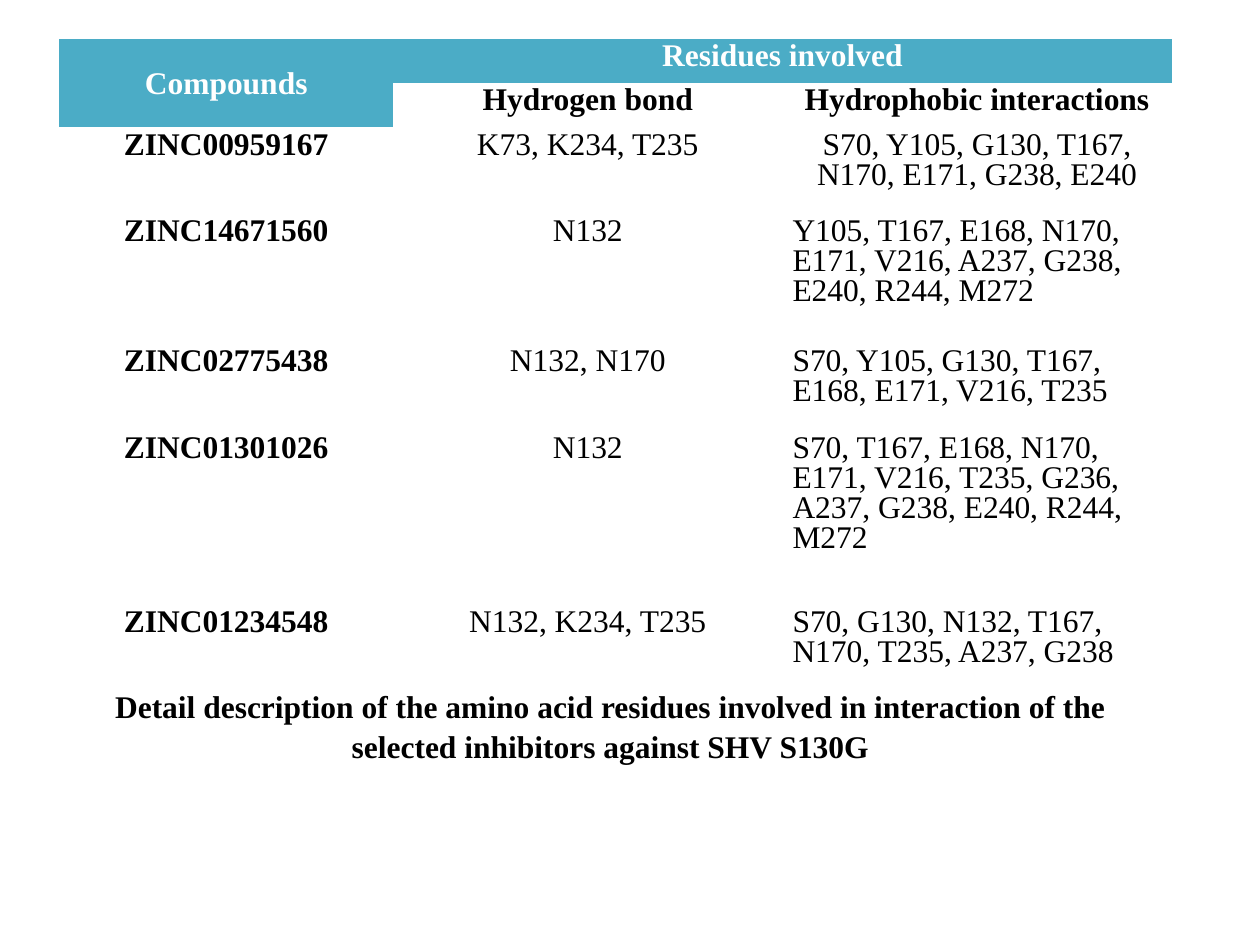
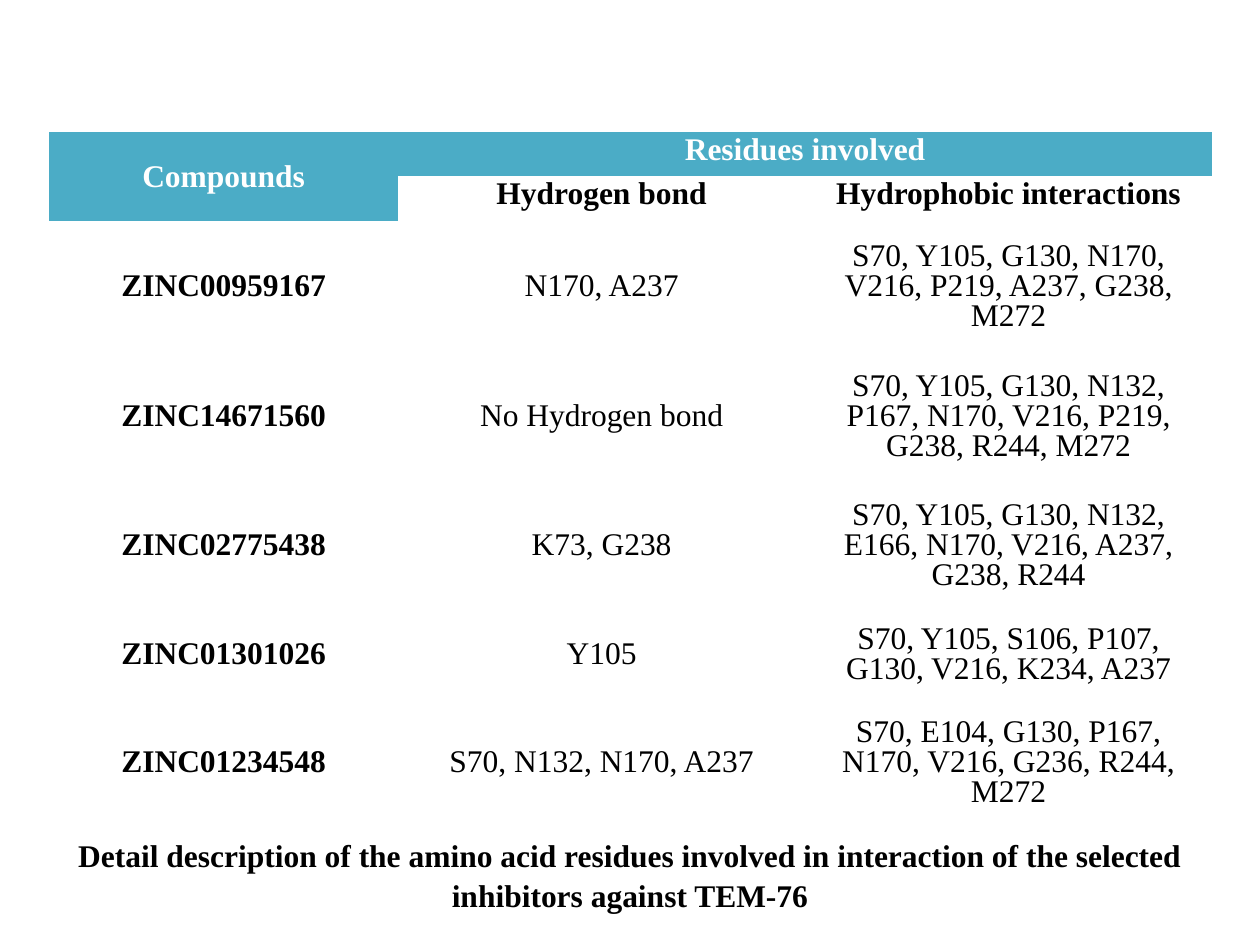
from pptx import Presentation
from pptx.dml.color import RGBColor
from pptx.enum.text import MSO_ANCHOR, MSO_AUTO_SIZE, PP_ALIGN
from pptx.oxml.ns import qn
from pptx.util import Inches, Pt

TEAL = RGBColor(0x4B, 0xAC, 0xC6)
WHITE = RGBColor(0xFF, 0xFF, 0xFF)
BLACK = RGBColor(0x00, 0x00, 0x00)
FONT = "Times New Roman"
SIZE = Pt(18)
PLAIN_TABLE_STYLE = "{2D5ABB26-0587-4C30-8999-92F81FD0307C}"
TITLE_ONLY = 5
HEADER_HEIGHT = 0.35
CAPTION_HEIGHT = 0.9
CAPTION = ("Detail description of the amino acid residues involved "
           "in interaction of the selected inhibitors against ")

# Each row: compound, hydrogen bonds, hydrophobic interactions, height in inches
SHV_ROWS = [
    ("ZINC00959167", "K73, K234, T235",
     "S70, Y105, G130, T167, N170, E171, G238, E240", 0.69),
    ("ZINC14671560", "N132",
     "Y105, T167, E168, N170, E171, V216, A237, G238, E240, R244, M272", 1.03),
    ("ZINC02775438", "N132, N170",
     "S70, Y105, G130, T167, E168, E171, V216, T235", 0.69),
    ("ZINC01301026", "N132",
     "S70, T167, E168, N170, E171, V216, T235, G236, A237, G238, E240, R244, M272", 1.38),
    ("ZINC01234548", "N132, K234, T235",
     "S70, G130, N132, T167, N170, T235, A237, G238", 0.69),
]
TEM_ROWS = [
    ("ZINC00959167", "N170, A237",
     "S70, Y105, G130, N170, V216, P219, A237, G238, M272", 1.03),
    ("ZINC14671560", "No Hydrogen bond",
     "S70, Y105, G130, N132, P167, N170, V216, P219, G238, R244, M272", 1.03),
    ("ZINC02775438", "K73, G238",
     "S70, Y105, G130, N132, E166, N170, V216, A237, G238, R244", 1.03),
    ("ZINC01301026", "Y105",
     "S70, Y105, S106, P107, G130, V216, K234, A237", 0.69),
    ("ZINC01234548", "S70, N132, N170, A237",
     "S70, E104, G130, P167, N170, V216, G236, R244, M272", 1.03),
]


def format_paragraph(paragraph, spacing, align=PP_ALIGN.CENTER, bold=True, color=BLACK):
    paragraph.alignment = align
    paragraph.line_spacing = spacing
    for run in paragraph.runs:
        run.font.name, run.font.size = FONT, SIZE
        run.font.bold = bold
        run.font.color.rgb = color


def fill_cell(cell, text, anchor=MSO_ANCHOR.TOP, header=False, **style):
    cell.text_frame.text = text
    cell.vertical_anchor = anchor
    cell.margin_left = cell.margin_right = Inches(0.08)
    cell.margin_top, cell.margin_bottom = Inches(0.03), 0
    if header:
        cell.fill.solid()
        cell.fill.fore_color.rgb = TEAL
        style["color"] = WHITE
    else:
        cell.fill.background()
    format_paragraph(cell.text_frame.paragraphs[0], 0.86, **style)


def add_residue_table(slide, box, column_widths, rows, anchor, left_aligned):
    """Two header rows, then one row per compound; left_aligned lists compounds
    whose hydrophobic residues are set flush left."""
    frame = slide.shapes.add_table(len(rows) + 2, 3, *map(Inches, box))
    for style_id in frame.element.iter(qn("a:tableStyleId")):
        style_id.text = PLAIN_TABLE_STYLE
    table = frame.table
    table.first_row = table.horz_banding = False
    for column, width in zip(table.columns, column_widths):
        column.width = Inches(width)
    heights = [HEADER_HEIGHT] * 2 + [row[-1] for row in rows]
    for table_row, height in zip(table.rows, heights):
        table_row.height = Inches(height)

    table.cell(0, 0).merge(table.cell(1, 0))
    table.cell(0, 1).merge(table.cell(0, 2))
    fill_cell(table.cell(0, 0), "Compounds", MSO_ANCHOR.MIDDLE, header=True)
    fill_cell(table.cell(0, 1), "Residues involved", header=True)
    fill_cell(table.cell(1, 1), "Hydrogen bond")
    fill_cell(table.cell(1, 2), "Hydrophobic interactions")

    for index, (compound, hydrogen, hydrophobic, _) in enumerate(rows, start=2):
        align = PP_ALIGN.LEFT if compound in left_aligned else PP_ALIGN.CENTER
        fill_cell(table.cell(index, 0), compound, anchor)
        fill_cell(table.cell(index, 1), hydrogen, anchor, bold=False)
        fill_cell(table.cell(index, 2), hydrophobic, anchor, bold=False, align=align)


def add_caption(slide, box, target):
    caption = slide.shapes.title
    caption.left, caption.top, caption.width, caption.height = map(Inches, box)
    text_frame = caption.text_frame
    text_frame.text = CAPTION + target
    text_frame.word_wrap = True
    text_frame.auto_size = MSO_AUTO_SIZE.NONE
    text_frame.vertical_anchor = MSO_ANCHOR.TOP
    format_paragraph(text_frame.paragraphs[0], 1.05)


def add_residue_slide(prs, target, rows, table_at, column_widths, caption_at,
                      caption_width, anchor, left_aligned=()):
    slide = prs.slides.add_slide(prs.slide_layouts[TITLE_ONLY])
    table_height = 2 * HEADER_HEIGHT + sum(row[-1] for row in rows)
    table_box = (*table_at, sum(column_widths), table_height)
    add_residue_table(slide, table_box, column_widths, rows, anchor, left_aligned)
    add_caption(slide, (*caption_at, caption_width, CAPTION_HEIGHT), target)


def main():
    prs = Presentation()
    prs.slide_width, prs.slide_height = Inches(10), Inches(7.5)
    add_residue_slide(prs, "SHV S130G", SHV_ROWS, (0.47, 0.31), (2.65, 3.09, 3.09),
                      (0.39, 5.39), 8.91, MSO_ANCHOR.TOP,
                      left_aligned=[row[0] for row in SHV_ROWS[1:]])
    add_residue_slide(prs, "TEM-76", TEM_ROWS, (0.39, 1.05), (2.77, 3.23, 3.23),
                      (0.39, 6.57), 9.22, MSO_ANCHOR.MIDDLE)
    prs.save("out.pptx")


if __name__ == "__main__":
    main()
